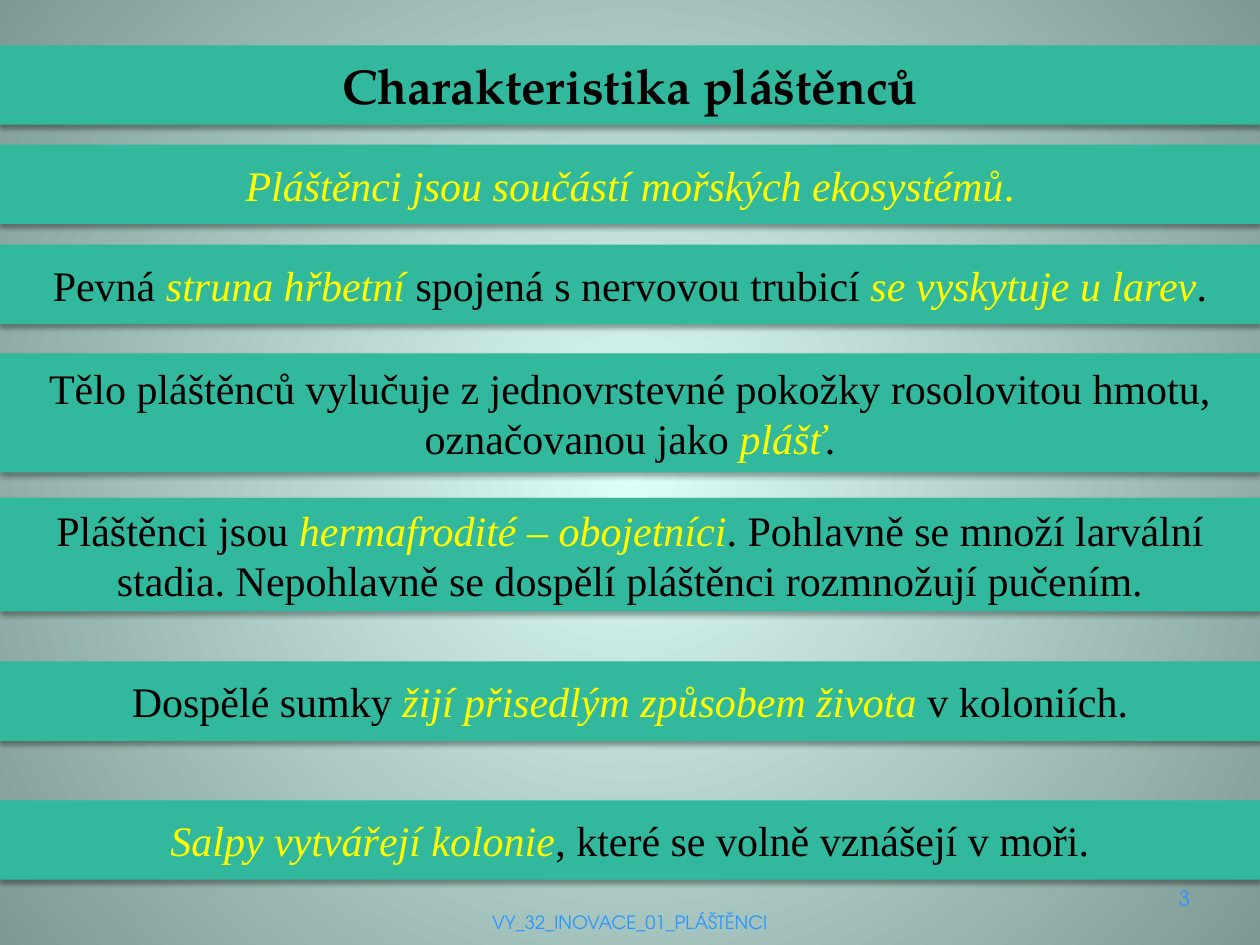
from dataclasses import dataclass
from pptx import Presentation
from pptx.dml.color import RGBColor as Color
from pptx.enum.shapes import MSO_SHAPE as Shape
from pptx.enum.text import MSO_ANCHOR as Anchor, PP_ALIGN as Align
from pptx.oxml import parse_xml as to_xml
from pptx.oxml.ns import nsdecls
from pptx.util import Inches, Pt

WIDE, HIGH = Inches(10), Inches(7.5)


@dataclass(frozen=True)
class Theme:
    band: str = "32B89C"
    glow: str = "DEFFF8"
    edge: str = "7C9993"
    ink: str = "000000"
    key: str = "FFFF00"
    note: str = "2A94FF"
    head: str = "TeX Gyre Pagella"
    body: str = "Times New Roman"
    foot: str = "TeX Gyre Adventor"
    head_size: float = 28
    body_size: float = 24
    foot_size: float = 10.5
    page_size: float = 12


THEME = Theme()

BANDS = [
    (0.153, 0.084, [("Pláštěnci jsou součástí mořských ekosystémů", "key"), (".", "dot")]),
    (0.259, 0.084, [("Pevná ", "ink"), ("struna hřbetní ", "key"),
                    ("spojená s nervovou trubicí ", "ink"),
                    ("se vyskytuje u larev", "key"), (".", "ink")]),
    (0.374, 0.126, [("Tělo pláštěnců vylučuje z jednovrstevné pokožky rosolovitou hmotu, "
                     "označovanou jako ", "ink"), ("plášť", "key"), (".", "ink")]),
    (0.527, 0.12, [("Pláštěnci jsou ", "ink"), ("hermafrodité – obojetníci", "key"),
                   (". Pohlavně se množí larvální stadia. Nepohlavně se dospělí "
                    "pláštěnci rozmnožují pučením.", "ink")]),
    (0.7, 0.084, [("Dospělé sumky ", "ink"), ("žijí přisedlým způsobem života ", "key"),
                  ("v koloniích.", "ink")]),
    (0.847, 0.084, [("Salpy vytvářejí kolonie", "key"),
                    (", které se volně vznášejí v moři.", "ink")]),
]


def paint_back(slide):
    stops = "".join(
        f'<a:gs pos="{pos}"><a:srgbClr val="{tone}"/></a:gs>'
        for pos, tone in ((0, THEME.glow), (100000, THEME.edge)))
    back = to_xml(
        f'<p:bg {nsdecls("p", "a")}><p:bgPr><a:gradFill rotWithShape="1">'
        f'<a:gsLst>{stops}</a:gsLst><a:path path="circle">'
        '<a:fillToRect l="50000" t="50000" r="50000" b="50000"/></a:path>'
        '</a:gradFill><a:effectLst/></p:bgPr></p:bg>')
    slide.element.cSld.insert(0, back)


def add_run(para, text, face, size, tone, bold=False, slant=False):
    run = para.add_run()
    run.text = text
    font = run.font
    font.name, font.size = face, Pt(size)
    font.bold, font.italic = bold, slant
    font.color.rgb = Color.from_string(tone)


def add_shade(shape):
    shape.element.spPr.append(to_xml(
        f'<a:effectLst {nsdecls("a")}><a:outerShdw blurRad="{Pt(3.1)}" '
        f'dist="{Pt(1.8)}" dir="5400000" rotWithShape="0">'
        '<a:srgbClr val="000000"><a:alpha val="35000"/></a:srgbClr>'
        '</a:outerShdw></a:effectLst>'))


def add_band(slide, top, tall):
    band = slide.shapes.add_shape(
        Shape.RECTANGLE, 0, int(top * HIGH), WIDE, int(tall * HIGH))
    band.fill.solid()
    band.fill.fore_color.rgb = Color.from_string(THEME.band)
    band.line.fill.background()
    add_shade(band)
    frame = band.text_frame
    frame.word_wrap = True
    frame.vertical_anchor = Anchor.MIDDLE
    para = frame.paragraphs[0]
    para.alignment = Align.CENTER
    return para


def add_title(slide, text):
    para = add_band(slide, 0.048, 0.084)
    add_run(para, text, THEME.head, THEME.head_size, THEME.ink, bold=True)


def add_fact(slide, top, tall, parts):
    para = add_band(slide, top, tall)
    for text, role in parts:
        tone = THEME.ink if role == "ink" else THEME.key
        add_run(para, text, THEME.body, THEME.body_size, tone, slant=role == "key")


def add_note(slide, left, top, wide, text, size):
    box = slide.shapes.add_textbox(
        int(left * WIDE), int(top * HIGH), int(wide * WIDE), int(0.041 * HIGH))
    frame = box.text_frame
    frame.word_wrap = True
    para = frame.paragraphs[0]
    para.alignment = Align.CENTER
    add_run(para, text, THEME.foot, size, THEME.note)


def main():
    deck = Presentation()
    deck.slide_width, deck.slide_height = WIDE, HIGH
    slide = deck.slides.add_slide(deck.slide_layouts[6])
    paint_back(slide)
    add_title(slide, "Charakteristika pláštěnců")
    for top, tall, parts in BANDS:
        add_fact(slide, top, tall, parts)
    add_note(slide, 0.33, 0.958, 0.34, "VY_32_INOVACE_01_PLÁŠTĚNCI", THEME.foot_size)
    add_note(slide, 0.91, 0.93, 0.06, "3", THEME.page_size)
    deck.save("out.pptx")


if __name__ == "__main__":
    main()
